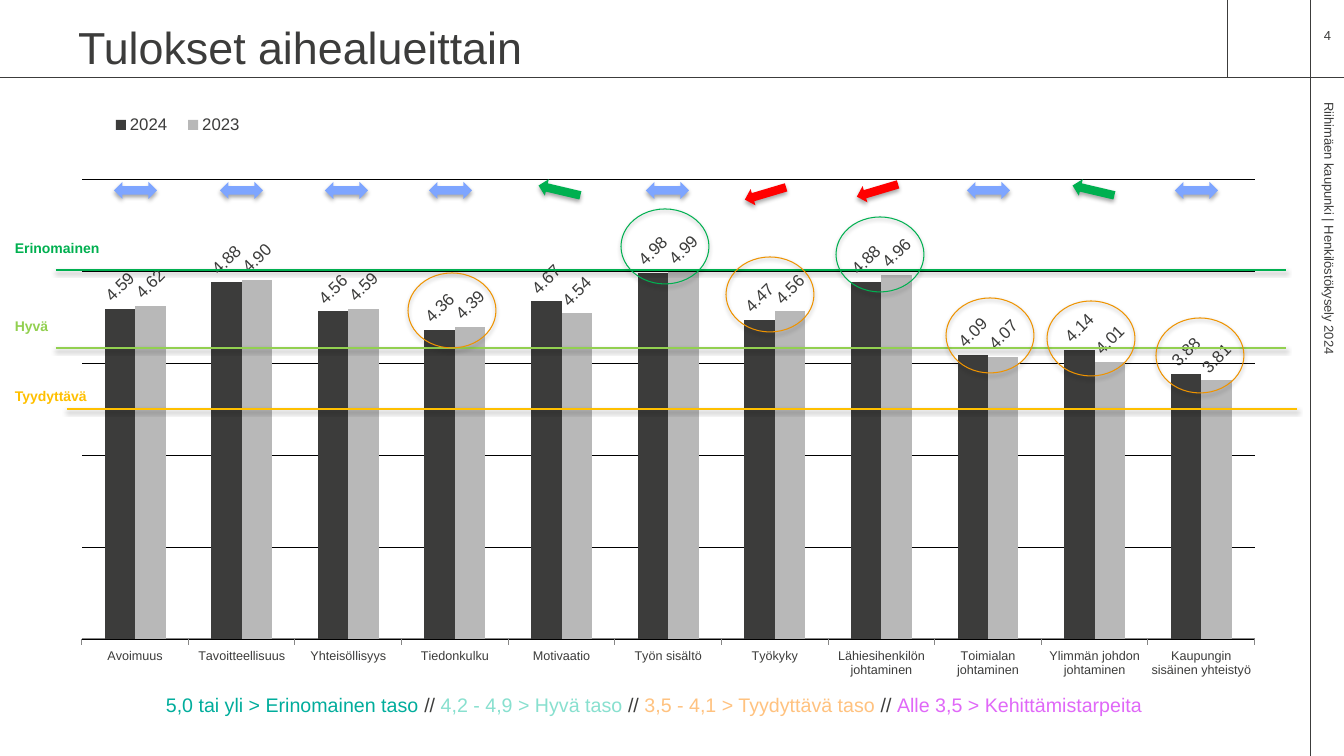
from dataclasses import dataclass
from typing import Optional

from lxml.etree import SubElement
from pptx import Presentation
from pptx.chart.data import CategoryChartData
from pptx.dml.color import RGBColor
from pptx.enum.chart import XL_CHART_TYPE, XL_LABEL_POSITION, XL_LEGEND_POSITION, XL_TICK_MARK
from pptx.enum.shapes import MSO_CONNECTOR, MSO_SHAPE
from pptx.enum.text import MSO_ANCHOR, MSO_AUTO_SIZE, PP_ALIGN
from pptx.oxml.ns import qn
from pptx.util import Emu, Pt


@dataclass(frozen=True)
class Theme:
    font: str = "Arial"
    ink: str = "3C3C3B"
    grey: str = "B8B8B8"
    axis: str = "868686"
    grid: str = "000000"
    green: str = "00B050"
    lime: str = "92D050"
    gold: str = "FFC000"
    orange: str = "EE9300"
    red: str = "FF0000"
    blue: str = "7EA5FF"
    teal: str = "00AD9C"
    mint: str = "88E0CF"
    peach: str = "FFC27F"
    pink: str = "E068F8"
    title: float = 32
    note: float = 14
    chart: float = 12
    level: float = 10
    small: float = 9.3
    tick: float = 9


@dataclass(frozen=True)
class Level:
    name: str
    color: str
    left: int
    y: int
    top: int


@dataclass(frozen=True)
class Trend:
    shape: MSO_SHAPE
    color: str
    turn: float


@dataclass(frozen=True)
class Ring:
    left: int
    top: int
    color: str


T = Theme()
SAME = Trend(MSO_SHAPE.LEFT_RIGHT_ARROW, T.blue, 0)
RISE = Trend(MSO_SHAPE.LEFT_ARROW, T.green, 13.2)
FALL = Trend(MSO_SHAPE.LEFT_ARROW, T.red, 343.4)

FRAME = [(1310, 0, 1310, 756), (0, 77, 1344, 77), (1227, 0, 1227, 77)]
LEVELS = [
    Level("Erinomainen", T.green, 56, 270, 235),
    Level("Hyvä", T.lime, 56, 348, 313),
    Level("Tyydyttävä", T.gold, 67, 409, 383),
]
TRENDS = [
    (114, 182, SAME), (220, 182, SAME), (325, 182, SAME), (429, 182, SAME),
    (538, 182, RISE), (646, 182, SAME), (744, 185, FALL), (856, 182, FALL),
    (967, 182, SAME), (1072, 182, RISE), (1175, 182, SAME),
]
RINGS = [
    Ring(408, 273, T.orange), Ring(946, 298, T.orange), Ring(1047, 301, T.orange),
    Ring(1156, 318, T.orange), Ring(726, 257, T.orange),
    Ring(621, 209, T.green), Ring(836, 217, T.green),
]
TOPICS = [
    "Avoimuus", "Tavoitteellisuus", "Yhteisöllisyys", "Tiedonkulku", "Motivaatio",
    "Työn sisältö", "Työkyky", "Lähiesihenkilön johtaminen", "Toimialan johtaminen",
    "Ylimmän johdon johtaminen", "Kaupungin sisäinen yhteistyö",
]
YEARS = [
    ("2024", T.ink, [4.59, 4.88, 4.56, 4.36, 4.67, 4.98, 4.47, 4.88, 4.09, 4.14, 3.88]),
    ("2023", T.grey, [4.62, 4.90, 4.59, 4.39, 4.54, 4.99, 4.56, 4.96, 4.07, 4.01, 3.81]),
]
SCALE = [
    ("5,0 tai yli > Erinomainen taso ", T.teal), ("// ", T.ink),
    ("4,2 - 4,9 > Hyvä taso ", T.mint), ("// ", T.ink),
    ("3,5 - 4,1 > Tyydyttävä taso ", T.peach), ("// ", T.ink),
    ("Alle 3,5 > Kehittämistarpeita", T.pink),
]


def px(*sizes: int) -> list[Emu]:
    return [Emu(round(size * 914400 / 100.8)) for size in sizes]


def rgb(code: str) -> RGBColor:
    return RGBColor.from_string(code)


def style(font, size: float, color: str, bold: bool = False) -> None:
    font.name, font.size, font.bold = T.font, Pt(size), bold
    font.color.rgb = rgb(color)


def write(shape, runs: list[tuple[str, str]], *, size: float, bold: bool = False,
          align=PP_ALIGN.LEFT, anchor=MSO_ANCHOR.TOP, inset: bool = True,
          space: Optional[float] = None) -> None:
    frame = shape.text_frame
    frame.word_wrap, frame.auto_size = True, MSO_AUTO_SIZE.NONE
    frame.vertical_anchor = anchor
    if not inset:
        frame.margin_left = frame.margin_right = frame.margin_top = frame.margin_bottom = 0
    para = frame.paragraphs[0]
    para.alignment = align
    if space:
        para.line_spacing = space
    for text, color in runs:
        run = para.add_run()
        run.text = text
        style(run.font, size, color, bold)


def shade(shape, dist: int = 0, alpha: int = 0) -> None:
    """Replace the theme shadow by a soft one below, or by none if dist is 0."""
    effects = SubElement(shape._element.spPr, qn("a:effectLst"))
    if dist:
        drop = SubElement(effects, qn("a:outerShdw"), blurRad="40000", dist=str(dist),
                          dir="5400000", rotWithShape="0")
        tone = SubElement(drop, qn("a:srgbClr"), val="000000")
        SubElement(tone, qn("a:alpha"), val=str(alpha * 1000))


def rule(slide, ends: tuple[int, int, int, int], color: str, width: float,
         dist: int = 0) -> None:
    line = slide.shapes.add_connector(MSO_CONNECTOR.STRAIGHT, *px(*ends))
    line.line.color.rgb, line.line.width = rgb(color), Pt(width)
    shade(line, dist, 38)


def mark(slide, kind: MSO_SHAPE, box: tuple[int, int, int, int], *,
         fill: Optional[str] = None, line: Optional[str] = None, turn: float = 0) -> None:
    shape = slide.shapes.add_shape(kind, *px(*box))
    shape.rotation = turn
    for part, color in ((shape.fill, fill), (shape.line.fill, line)):
        if color:
            part.solid()
            part.fore_color.rgb = rgb(color)
        else:
            part.background()
    if line:
        shape.line.width = Pt(0.75)
    shade(shape, 23000, 35)


def place(owner, before, box: tuple[float, ...], inner: bool = False) -> None:
    """Set a manual layout, in fractions of the chart, on a chart part."""
    for old in owner.findall(qn("c:layout")):
        owner.remove(old)
    layout = SubElement(owner, qn("c:layout"))
    before.addnext(layout) if before is not None else owner.insert(0, layout)
    manual = SubElement(layout, qn("c:manualLayout"))
    if inner:
        SubElement(manual, qn("c:layoutTarget"), val="inner")
    for name in ("xMode", "yMode"):
        SubElement(manual, qn(f"c:{name}"), val="edge")
    for name, size in zip("xywh", box):
        SubElement(manual, qn(f"c:{name}"), val=str(size))


def plot(slide) -> None:
    data = CategoryChartData(number_format="#,##0.00")
    data.categories = TOPICS
    for year, _, scores in YEARS:
        data.add_series(year, scores)
    chart = slide.shapes.add_chart(
        XL_CHART_TYPE.COLUMN_CLUSTERED, *px(77, 104, 1186, 597), data).chart
    style(chart.font, T.chart, T.ink)
    chart.has_title = False
    chart.has_legend = True
    key = chart.legend
    key.position, key.include_in_layout = XL_LEGEND_POSITION.TOP, False
    place(key._element, key._element.find(qn("c:legendPos")), (0.02, 0.01, 0.13, 0.05))
    place(chart._chartSpace.chart.plotArea, None, (0.004, 0.126, 0.989, 0.77), True)

    axis = chart.value_axis
    axis.minimum_scale, axis.maximum_scale, axis.major_unit = 1, 6, 1
    axis.visible = False
    grid = axis.major_gridlines.format.line
    grid.color.rgb, grid.width = rgb(T.grid), Pt(0.25)
    base = chart.category_axis
    base.major_tick_mark = XL_TICK_MARK.OUTSIDE
    base.format.line.color.rgb = rgb(T.axis)
    style(base.tick_labels.font, T.tick, T.ink)

    bars = chart.plots[0]
    bars.gap_width, bars.overlap, bars.vary_by_categories = 150, 0, False
    for item, (_, color, _) in zip(bars.series, YEARS):
        item.format.fill.solid()
        item.format.fill.fore_color.rgb = rgb(color)
        tags = item.data_labels
        tags.show_value, tags.position = True, XL_LABEL_POSITION.OUTSIDE_END
        tags.number_format, tags.number_format_is_linked = "#,##0.00", False
        style(tags.font, T.chart, T.ink)
        body = tags._element.find(".//" + qn("a:bodyPr"))
        body.set("rot", "-2700000")
        body.set("vert", "horz")


def main() -> None:
    deck = Presentation()
    deck.slide_width, deck.slide_height = px(1344, 756)
    slide = deck.slides.add_slide(deck.slide_layouts[5])

    def label(box: tuple[int, int, int, int], runs: list[tuple[str, str]], **form):
        shape = slide.shapes.add_textbox(*px(*box))
        write(shape, runs, **form)
        return shape

    for ends in FRAME:
        rule(slide, ends, T.ink, 0.5)
    title = slide.shapes.title
    title.left, title.top, title.width, title.height = px(68, 9, 1210, 75)
    write(title, [("Tulokset aihealueittain", T.ink)], size=T.title, anchor=MSO_ANCHOR.MIDDLE)
    plot(slide)
    label((1286, 15, 83, 40), [("4", T.ink)], size=T.small, align=PP_ALIGN.CENTER,
          anchor=MSO_ANCHOR.MIDDLE, inset=False)
    side = label((1059, 348, 537, 26), [("Riihimäen kaupunki | Henkilöstökysely 2024", T.ink)],
                 size=T.small, space=0.9)
    side.rotation = 90
    for level in LEVELS:
        rule(slide, (level.left, level.y, level.left + 1230, level.y), level.color, 1, 20000)
        label((5, level.top, 112, 27), [(level.name, level.color)], size=T.level, bold=True)
    for left, top, trend in TRENDS:
        mark(slide, trend.shape, (left, top, 43, 17), fill=trend.color, turn=trend.turn)
    label((156, 688, 1023, 34), SCALE, size=T.note)
    for ring in RINGS:
        mark(slide, MSO_SHAPE.OVAL, (ring.left, ring.top, 88, 75), line=ring.color)
    deck.save("out.pptx")


if __name__ == "__main__":
    main()
